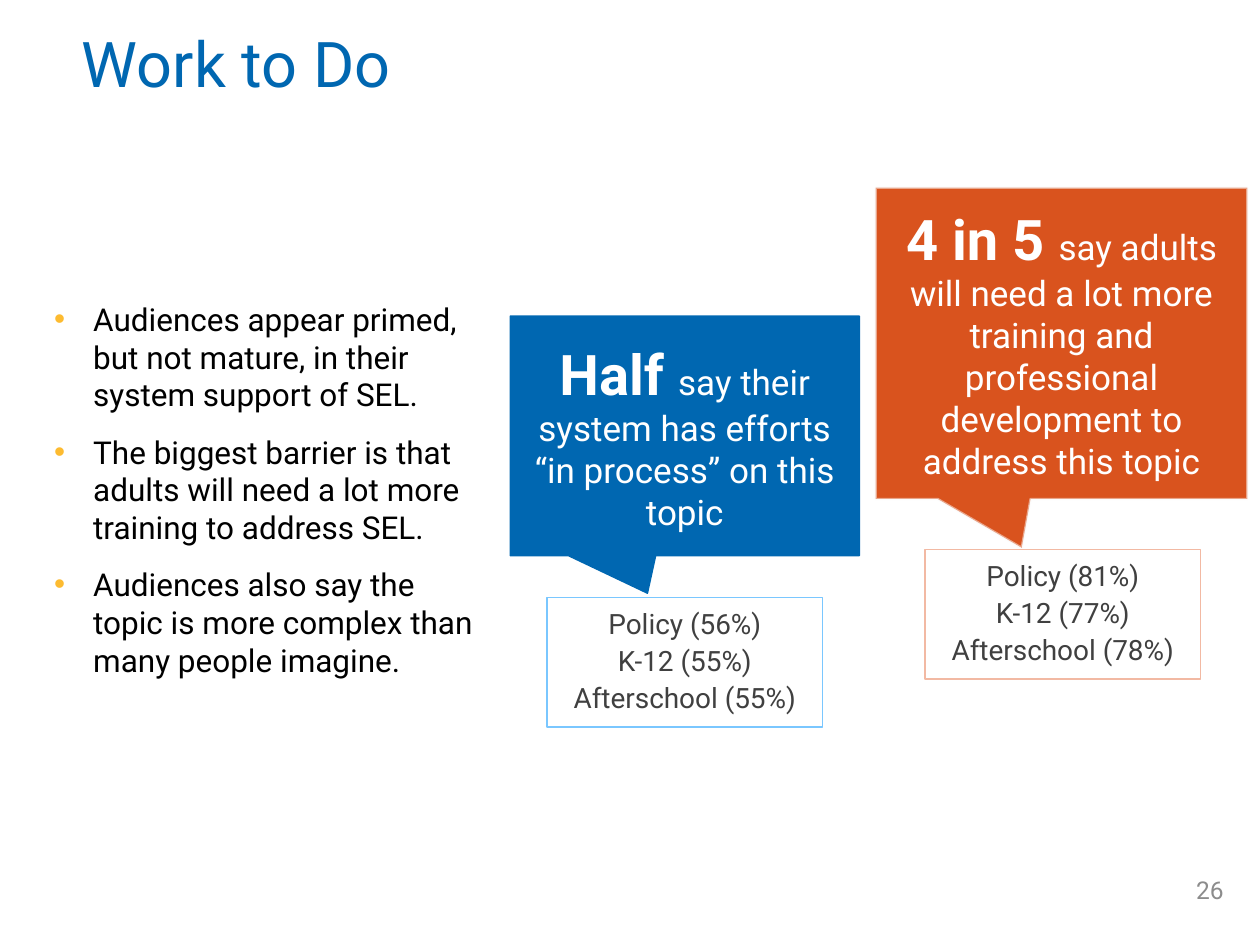
from lxml.etree import SubElement
from pptx import Presentation
from pptx.dml.color import RGBColor
from pptx.enum.shapes import MSO_SHAPE as Shape
from pptx.enum.text import MSO_ANCHOR as Anchor, MSO_AUTO_SIZE as AutoSize, PP_ALIGN as Align
from pptx.oxml.ns import qn
from pptx.util import Inches, Pt

BLUE = RGBColor(0x00, 0x67, 0xB1)
LIGHT_BLUE = RGBColor(0x7A, 0xC7, 0xFF)
ORANGE = RGBColor(0xD9, 0x53, 0x1E)
LIGHT_ORANGE = RGBColor(0xF2, 0xB9, 0xA3)
YELLOW = RGBColor(0xFD, 0xBB, 0x30)
OFF_WHITE = RGBColor(0xF9, 0xF9, 0xF9)
WHITE = RGBColor(0xFF, 0xFF, 0xFF)
BLACK = RGBColor(0x00, 0x00, 0x00)
DARK_GRAY = RGBColor(0x40, 0x40, 0x40)
GRAY = RGBColor(0x8C, 0x8C, 0x8C)

FONT = "Roboto"
BULLETS = [
    "Audiences appear primed, but not mature, in their system support of SEL.",
    "The biggest barrier is that adults will need a lot more training to address SEL.",
    "Audiences also say the topic is more complex than many people imagine.",
]


def apply_format(target, values):
    for name, value in values.items():
        setattr(target, name, value)


def place(shape, left, top, width, height):
    box = {"left": left, "top": top, "width": width, "height": height}
    apply_format(shape, {name: Inches(value) for name, value in box.items()})


def add_run(paragraph, text, size, color, bold=False):
    run = paragraph.add_run()
    run.text = text
    apply_format(run.font, {"name": FONT, "size": Pt(size), "bold": bold})
    run.font.color.rgb = color


def prepare_frame(shape, anchor):
    frame = shape.text_frame
    apply_format(frame, {"word_wrap": True, "auto_size": AutoSize.NONE, "vertical_anchor": anchor})
    return frame


def next_paragraph(frame, index):
    return frame.add_paragraph() if index else frame.paragraphs[0]


def fill_title(shape, text):
    place(shape, 0.55, 0, 7.84, 1.06)
    paragraph = prepare_frame(shape, Anchor.MIDDLE).paragraphs[0]
    apply_format(paragraph, {"alignment": Align.LEFT, "line_spacing": 0.9})
    add_run(paragraph, text, 36, BLUE)


def set_bullet(paragraph, color):
    properties = paragraph._p.get_or_add_pPr()
    properties.set("marL", str(Inches(0.31)))
    properties.set("indent", str(-Inches(0.31)))
    bullet_color = SubElement(properties, qn("a:buClr"))
    SubElement(bullet_color, qn("a:srgbClr"), val=str(color))
    SubElement(properties, qn("a:buFont"), typeface="Arial")
    SubElement(properties, qn("a:buChar"), char="•")


def fill_bullets(shape, texts):
    place(shape, 0.33, 2.33, 3.58, 3.14)
    frame = prepare_frame(shape, Anchor.TOP)
    for index, text in enumerate(texts):
        paragraph = next_paragraph(frame, index)
        set_bullet(paragraph, YELLOW)
        paragraph.space_before = Pt(11 if index else 0)
        add_run(paragraph, text, 18, BLACK)


def add_callout(slide, box, fill, line, line_width, lead, text):
    shape = slide.shapes.add_shape(Shape.RECTANGULAR_CALLOUT, 0, 0, 0, 0)
    place(shape, *box)
    shape.shadow.inherit = False
    shape.adjustments[0], shape.adjustments[1] = -0.107, 0.657
    shape.fill.solid()
    shape.fill.fore_color.rgb = fill
    shape.line.color.rgb = line
    shape.line.width = Pt(line_width)
    paragraph = prepare_frame(shape, Anchor.MIDDLE).paragraphs[0]
    paragraph.alignment = Align.CENTER
    add_run(paragraph, lead, 32, WHITE, bold=True)
    add_run(paragraph, text, 20, WHITE)
    return shape


def make_line_transparent(shape, opacity):
    color = shape.line._ln.find(".//" + qn("a:srgbClr"))
    SubElement(color, qn("a:alpha"), val=str(opacity * 1000))


def add_breakdown(slide, left, top, line, shares):
    shape = slide.shapes.add_shape(Shape.RECTANGLE, 0, 0, 0, 0)
    place(shape, left, top, 2.19, 1.03)
    shape.shadow.inherit = False
    shape.fill.background()
    shape.line.color.rgb = line
    shape.line.width = Pt(0.75)
    frame = prepare_frame(shape, Anchor.TOP)
    for index, (audience, share) in enumerate(shares.items()):
        paragraph = next_paragraph(frame, index)
        apply_format(paragraph, {"alignment": Align.CENTER, "line_spacing": 1.1})
        add_run(paragraph, f"{audience} ({share}%)", 16, DARK_GRAY)


def add_page_number(slide, number):
    shape = slide.shapes.add_textbox(0, 0, 0, 0)
    place(shape, 9.07, 6.86, 0.74, 0.4)
    paragraph = prepare_frame(shape, Anchor.MIDDLE).paragraphs[0]
    paragraph.alignment = Align.RIGHT
    add_run(paragraph, number, 14, GRAY)


def main():
    presentation = Presentation()
    apply_format(presentation, {"slide_width": Inches(10), "slide_height": Inches(7.5)})
    slide = presentation.slides.add_slide(presentation.slide_layouts[1])
    title, body = slide.placeholders
    fill_title(title, "Work to Do")
    add_page_number(slide, "26")
    fill_bullets(body, BULLETS)

    add_callout(slide, (4.05, 2.51, 2.77, 1.9), BLUE, BLUE, 0.85,
                "Half ", "say their system has efforts “in process” on this topic")
    add_breakdown(slide, 4.34, 4.74, LIGHT_BLUE, {"Policy": 56, "K-12": 55, "Afterschool": 55})

    training = add_callout(slide, (6.95, 1.49, 2.95, 2.47), ORANGE, OFF_WHITE, 1.35, "4 in 5 ",
                           "say adults will need a lot more training and "
                           "professional development to address this topic")
    make_line_transparent(training, 50)
    add_breakdown(slide, 7.34, 4.36, LIGHT_ORANGE, {"Policy": 81, "K-12": 77, "Afterschool": 78})
    presentation.save("out.pptx")


if __name__ == "__main__":
    main()
